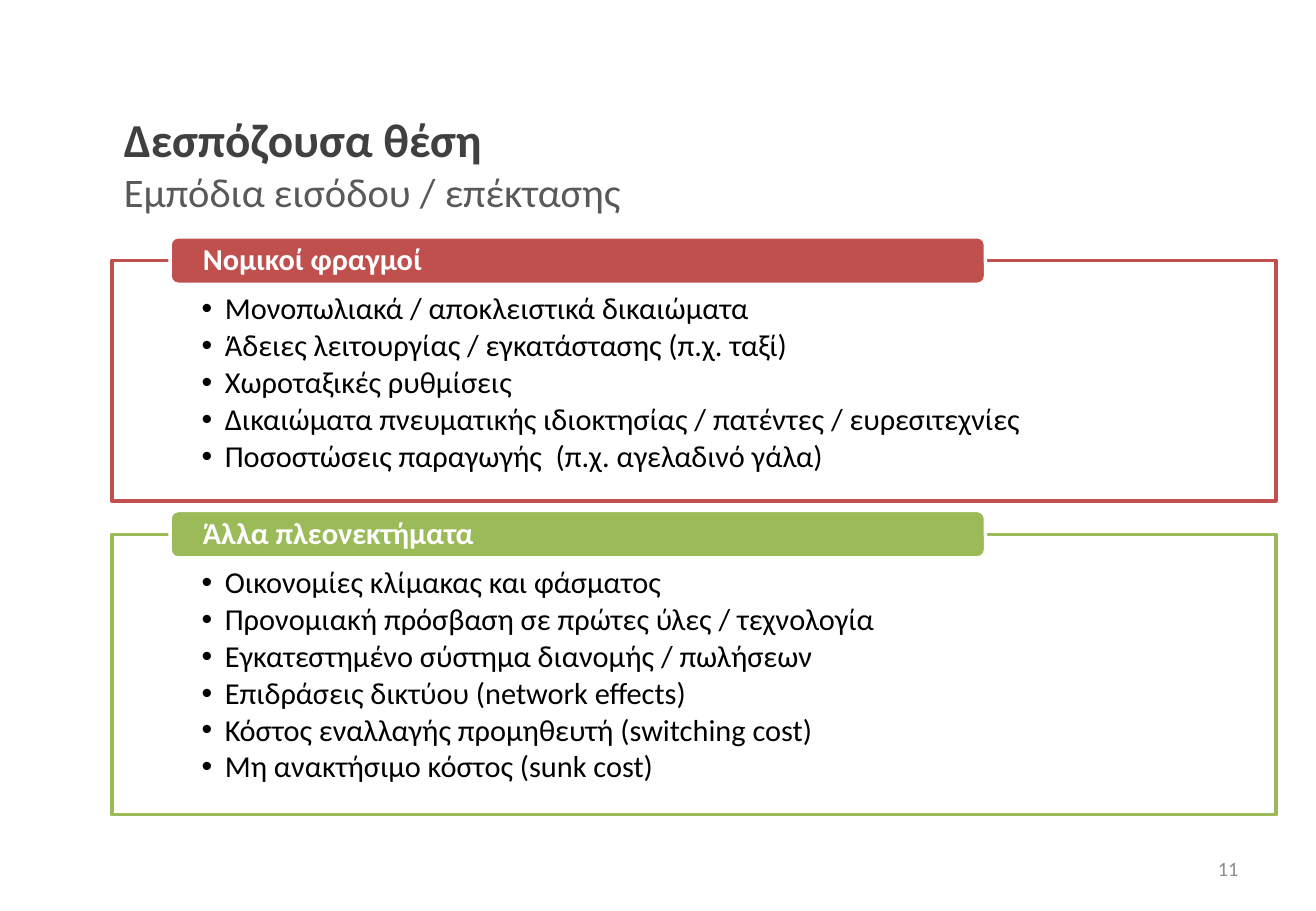
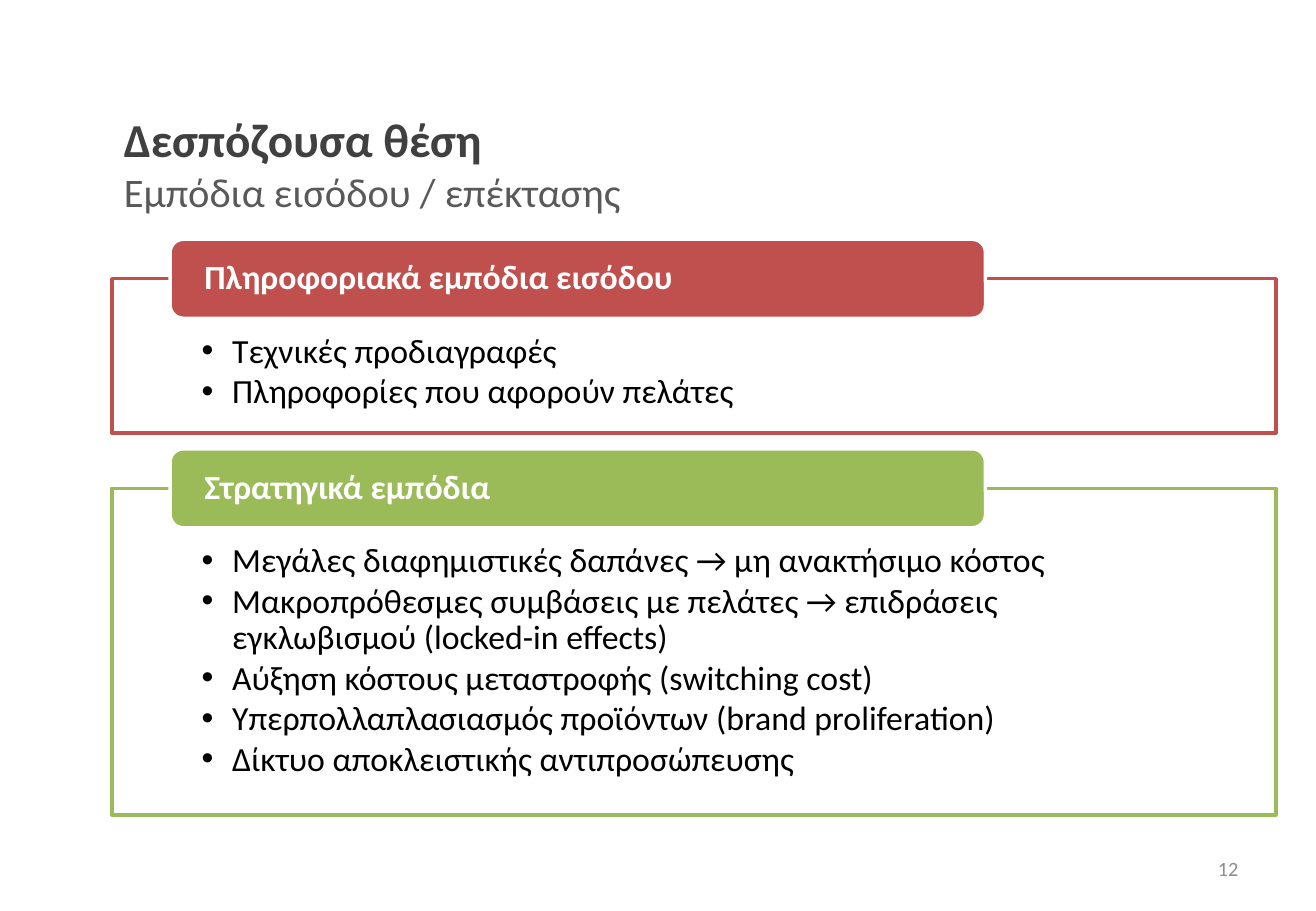
from dataclasses import dataclass

from lxml import etree
from pptx import Presentation
from pptx.dml.color import RGBColor
from pptx.enum.shapes import MSO_SHAPE
from pptx.enum.text import MSO_ANCHOR, PP_ALIGN
from pptx.oxml.ns import qn
from pptx.util import Inches, Pt

RECTANGLE = MSO_SHAPE.RECTANGLE
ROUNDED = MSO_SHAPE.ROUNDED_RECTANGLE
TOP, MIDDLE = MSO_ANCHOR.TOP, MSO_ANCHOR.MIDDLE
LEFT, RIGHT = PP_ALIGN.LEFT, PP_ALIGN.RIGHT


@dataclass(frozen=True)
class Theme:
    font: str = "Calibri"
    white: str = "FFFFFF"
    black: str = "000000"
    title: str = "404040"
    subtitle: str = "595959"
    number: str = "8C8C8C"
    accents: tuple = ("C0504D", "9BBB59")
    title_size: float = 28
    subtitle_size: float = 24
    number_size: float = 12
    outline: float = 2
    line_spacing: float = 0.9
    space_after: float = 2.4


THEME = Theme()
PAGE_SIZE = (10.83, 7.5)
TITLE_BOX = (0.92, 0.86, 9.58, 0.96)
NUMBER_BOX = (7.76, 6.95, 2.53, 0.4)
PANEL_LEFT, PANEL_WIDTH = 0.92, 9.58
TAB_INDENT, TAB_WIDTH = 0.48, 6.71

TITLE = "Δεσπόζουσα θέση"
SUBTITLE = "Εμπόδια εισόδου / επέκτασης"

PAGES = [
    {
        "number": "11", "top": 1.95, "tab_height": 0.39, "size": 18, "hanging": 0.19, "bottom": 0.14,
        "panels": [
            ("Νομικοί φραγμοί", 1.98, [
                "Μονοπωλιακά / αποκλειστικά δικαιώματα",
                "Άδειες λειτουργίας / εγκατάστασης (π.χ. ταξί)",
                "Χωροταξικές ρυθμίσεις",
                "Δικαιώματα πνευματικής ιδιοκτησίας / πατέντες / ευρεσιτεχνίες",
                "Ποσοστώσεις παραγωγής  (π.χ. αγελαδινό γάλα)",
            ]),
            ("Άλλα πλεονεκτήματα", 2.31, [
                "Οικονομίες κλίμακας και φάσματος",
                "Προνομιακή πρόσβαση σε πρώτες ύλες / τεχνολογία",
                "Εγκατεστημένο σύστημα διανομής / πωλήσεων",
                "Επιδράσεις δικτύου (network effects)",
                "Κόστος εναλλαγής προμηθευτή (switching cost)",
                "Μη ανακτήσιμο κόστος (sunk cost)",
            ]),
        ],
    },
    {
        "number": "12", "top": 1.97, "tab_height": 0.65, "size": 20, "hanging": 0.25, "bottom": 0.16,
        "panels": [
            ("Πληροφοριακά εμπόδια εισόδου", 1.27, [
                "Τεχνικές προδιαγραφές",
                "Πληροφορίες που αφορούν πελάτες",
            ]),
            ("Στρατηγικά εμπόδια", 2.69, [
                "Μεγάλες διαφημιστικές δαπάνες → μη ανακτήσιμο κόστος",
                "Μακροπρόθεσμες συμβάσεις με πελάτες → επιδράσεις εγκλωβισμού (locked-in effects)",
                "Αύξηση κόστους μεταστροφής (switching cost)",
                "Υπερπολλαπλασιασμός προϊόντων (brand proliferation)",
                "Δίκτυο αποκλειστικής αντιπροσώπευσης",
            ]),
        ],
    },
]


def apply(target, formats):
    for name, value in formats.items():
        setattr(target, name, value)


def set_frame(frame, anchor, insets=(0.1, 0.05, 0.1, 0.05)):
    sides = ("margin_left", "margin_top", "margin_right", "margin_bottom")
    apply(frame, {side: Inches(inset) for side, inset in zip(sides, insets)})
    apply(frame, {"word_wrap": True, "vertical_anchor": anchor})


def add_span(para, text, size, color, bold=False):
    span = para.add_run()
    span.text = text
    apply(span.font, {"name": THEME.font, "size": Pt(size), "bold": bold})
    span.font.color.rgb = RGBColor.from_string(color)


def add_text_box(page, box, align):
    frame = page.shapes.add_textbox(*map(Inches, box)).text_frame
    set_frame(frame, MIDDLE)
    para = frame.paragraphs[0]
    para.alignment = align
    return para


def add_box(page, preset, box, fill, line):
    shape = page.shapes.add_shape(preset, *map(Inches, box))
    shape.shadow.inherit = False
    shape.fill.solid()
    shape.fill.fore_color.rgb = RGBColor.from_string(fill)
    shape.line.color.rgb = RGBColor.from_string(line)
    shape.line.width = Pt(THEME.outline)
    return shape


def add_bullet(para, hanging):
    properties = para._p.get_or_add_pPr()
    properties.set("marL", str(Inches(hanging)))
    properties.set("indent", str(-Inches(hanging)))
    etree.SubElement(properties, qn("a:buFont")).set("typeface", "Arial")
    etree.SubElement(properties, qn("a:buChar")).set("char", "•")


def add_title(page, box):
    para = add_text_box(page, box, LEFT)
    add_span(para, TITLE, THEME.title_size, THEME.title, True)
    para.add_line_break()
    add_span(para, SUBTITLE, THEME.subtitle_size, THEME.subtitle)


def add_number(page, box, number):
    add_span(add_text_box(page, box, RIGHT), number, THEME.number_size, THEME.number)


def add_panel(page, box, heading, items, accent, layout):
    left, top, width, height = box
    tab_height, size = layout["tab_height"], layout["size"]
    spacing = {"alignment": LEFT, "line_spacing": THEME.line_spacing}

    frame = add_box(page, RECTANGLE, box, THEME.white, accent).text_frame
    set_frame(frame, TOP, (0.74, 0.7 * tab_height, 0.74, layout["bottom"]))
    for index, item in enumerate(items):
        para = frame.add_paragraph() if index else frame.paragraphs[0]
        add_bullet(para, layout["hanging"])
        apply(para, {**spacing, "level": 1, "space_after": Pt(THEME.space_after)})
        add_span(para, item, size, THEME.black)

    tab_box = (left + TAB_INDENT, top - tab_height / 2, TAB_WIDTH, tab_height)
    frame = add_box(page, ROUNDED, tab_box, accent, THEME.white).text_frame
    set_frame(frame, MIDDLE, (0.25, 0, 0.25, 0))
    apply(frame.paragraphs[0], spacing)
    add_span(frame.paragraphs[0], heading, size, THEME.white, True)


def add_page(deck, layout):
    page = deck.slides.add_slide(deck.slide_layouts[6])
    add_title(page, TITLE_BOX)
    tab_height = layout["tab_height"]
    top = layout["top"] + tab_height / 2
    for (heading, height, items), accent in zip(layout["panels"], THEME.accents):
        add_panel(page, (PANEL_LEFT, top, PANEL_WIDTH, height), heading, items, accent, layout)
        top += height + 0.7 * tab_height
    add_number(page, NUMBER_BOX, layout["number"])


def main():
    deck = Presentation()
    deck.slide_width, deck.slide_height = map(Inches, PAGE_SIZE)
    for layout in PAGES:
        add_page(deck, layout)
    deck.save("out.pptx")


if __name__ == "__main__":
    main()
